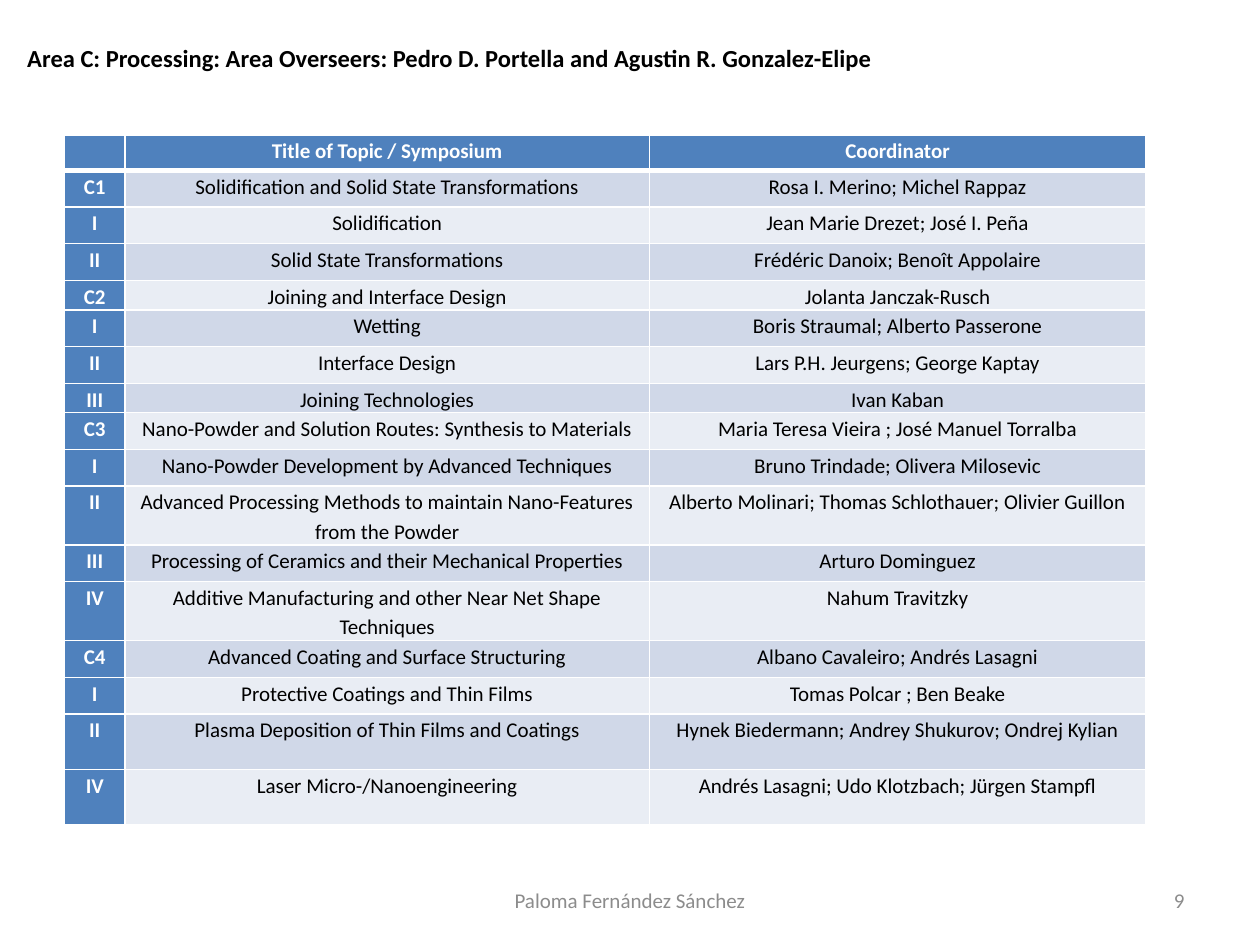
from lxml.etree import SubElement
from pptx import Presentation
from pptx.dml.color import RGBColor
from pptx.enum.text import MSO_ANCHOR as Anchor, PP_ALIGN as Align
from pptx.oxml.ns import qn
from pptx.util import Cm, Pt

FONT = "Calibri"
BLUE = RGBColor(0x4F, 0x81, 0xBD)
BANDS = (RGBColor(0xD0, 0xD8, 0xE8), RGBColor(0xE9, 0xED, 0xF4))
WHITE = RGBColor(0xFF, 0xFF, 0xFF)
BLACK = RGBColor(0, 0, 0)
GREY = RGBColor(0x8C, 0x8C, 0x8C)

TIGHT, NORMAL, TALL = Cm(0.38), Cm(0.74), Cm(1.12)
COLUMN_WIDTHS = (Cm(1.22), Cm(10.57), Cm(10.01))
TABLE_LEFT, TABLE_TOP = Cm(1.3), Cm(2.72)

# Row height, code, topic, coordinator
SYMPOSIA = [
    (TIGHT, "", "Title of Topic / Symposium", "Coordinator"),
    (NORMAL, "C1", "Solidification and Solid State Transformations", "Rosa I. Merino; Michel Rappaz"),
    (NORMAL, "I", "Solidification", "Jean Marie Drezet; José I. Peña"),
    (NORMAL, "II", "Solid State Transformations", "Frédéric Danoix; Benoît Appolaire"),
    (TIGHT, "C2", "Joining and Interface Design", "Jolanta Janczak-Rusch"),
    (NORMAL, "I", "Wetting", "Boris Straumal; Alberto Passerone"),
    (NORMAL, "II", "Interface Design", "Lars P.H. Jeurgens; George Kaptay"),
    (TIGHT, "III", "Joining Technologies", "Ivan Kaban"),
    (NORMAL, "C3", "Nano-Powder and Solution Routes: Synthesis to Materials",
     "Maria Teresa Vieira ; José Manuel Torralba"),
    (NORMAL, "I", "Nano-Powder Development by Advanced Techniques", "Bruno Trindade; Olivera Milosevic"),
    (TALL, "II", "Advanced Processing Methods to maintain Nano-Features from the Powder",
     "Alberto Molinari; Thomas Schlothauer; Olivier Guillon"),
    (NORMAL, "III", "Processing of Ceramics and their Mechanical Properties", "Arturo Dominguez"),
    (NORMAL, "IV", "Additive Manufacturing and other Near Net Shape Techniques", "Nahum Travitzky"),
    (NORMAL, "C4", "Advanced Coating and Surface Structuring", "Albano Cavaleiro; Andrés Lasagni"),
    (NORMAL, "I", "Protective Coatings and Thin Films", "Tomas Polcar ; Ben Beake"),
    (TALL, "II", "Plasma Deposition of Thin Films and Coatings",
     "Hynek Biedermann; Andrey Shukurov; Ondrej Kylian"),
    (TALL, "IV", "Laser Micro-/Nanoengineering", "Andrés Lasagni; Udo Klotzbach; Jürgen Stampfl"),
]

# Text, (left, top, width, height) in cm, alignment, size, colour, bold
LABELS = [
    ("Area C: Processing: Area Overseers: Pedro D. Portella and Agustin R. Gonzalez-Elipe",
     (0.3, 0.74, 22.4, 0.86), Align.LEFT, 14, BLACK, True),
    ("Paloma Fernández Sánchez", (8.68, 17.65, 8.04, 1.01), Align.CENTER, 12, GREY, False),
    ("9", (18.2, 17.65, 5.93, 1.01), Align.RIGHT, 12, GREY, False),
]


def write(frame, text, align, size, colour, bold):
    para = frame.paragraphs[0]
    para.alignment = align
    span = para.add_run()
    span.text = text
    for name, value in {"name": FONT, "size": Pt(size), "bold": bold}.items():
        setattr(span.font, name, value)
    span.font.color.rgb = colour
    return para


def add_borders(cell, bottom):
    """Draw white 1 pt cell borders, with the bottom one `bottom` points wide."""
    properties = cell._tc.get_or_add_tcPr()
    widths = {"a:lnL": 1, "a:lnR": 1, "a:lnT": 1, "a:lnB": bottom}
    for index, (tag, width) in enumerate(widths.items()):
        line = SubElement(properties, qn(tag), w=str(Pt(width)))
        SubElement(SubElement(line, qn("a:solidFill")), qn("a:srgbClr"), val=str(WHITE))
        properties.insert(index, line)


def fill_cell(cell, text, row, column):
    heading = row == 0 or column == 0
    margins = {"margin_left": Cm(0.15), "margin_right": Cm(0.15), "margin_top": 0, "margin_bottom": 0}
    for name, value in margins.items():
        setattr(cell, name, value)
    cell.fill.solid()
    cell.fill.fore_color.rgb = BLUE if heading else BANDS[(row - 1) % 2]
    add_borders(cell, bottom=3 if row == 0 else 1)
    para = write(cell.text_frame, text, Align.CENTER, 12, WHITE if heading else BLACK, heading)
    para.line_spacing = 1.15


def add_symposia(page):
    frame = page.shapes.add_table(
        len(SYMPOSIA), len(COLUMN_WIDTHS), TABLE_LEFT, TABLE_TOP,
        sum(COLUMN_WIDTHS), sum(height for height, *_ in SYMPOSIA))
    table = frame.table
    for column, width in zip(table.columns, COLUMN_WIDTHS):
        column.width = width
    for row, (height, *texts) in enumerate(SYMPOSIA):
        table.rows[row].height = height
        for column, text in enumerate(texts):
            fill_cell(table.cell(row, column), text, row, column)


def add_label(page, text, place, *style):
    box = page.shapes.add_textbox(*map(Cm, place))
    box.text_frame.word_wrap = True
    box.text_frame.vertical_anchor = Anchor.MIDDLE
    write(box.text_frame, text, *style)


def main():
    deck = Presentation()
    deck.slide_width, deck.slide_height = Cm(25.4), Cm(19.05)
    page = deck.slides.add_slide(deck.slide_layouts[6])
    add_symposia(page)
    for label in LABELS:
        add_label(page, *label)
    deck.save("out.pptx")


if __name__ == "__main__":
    main()
